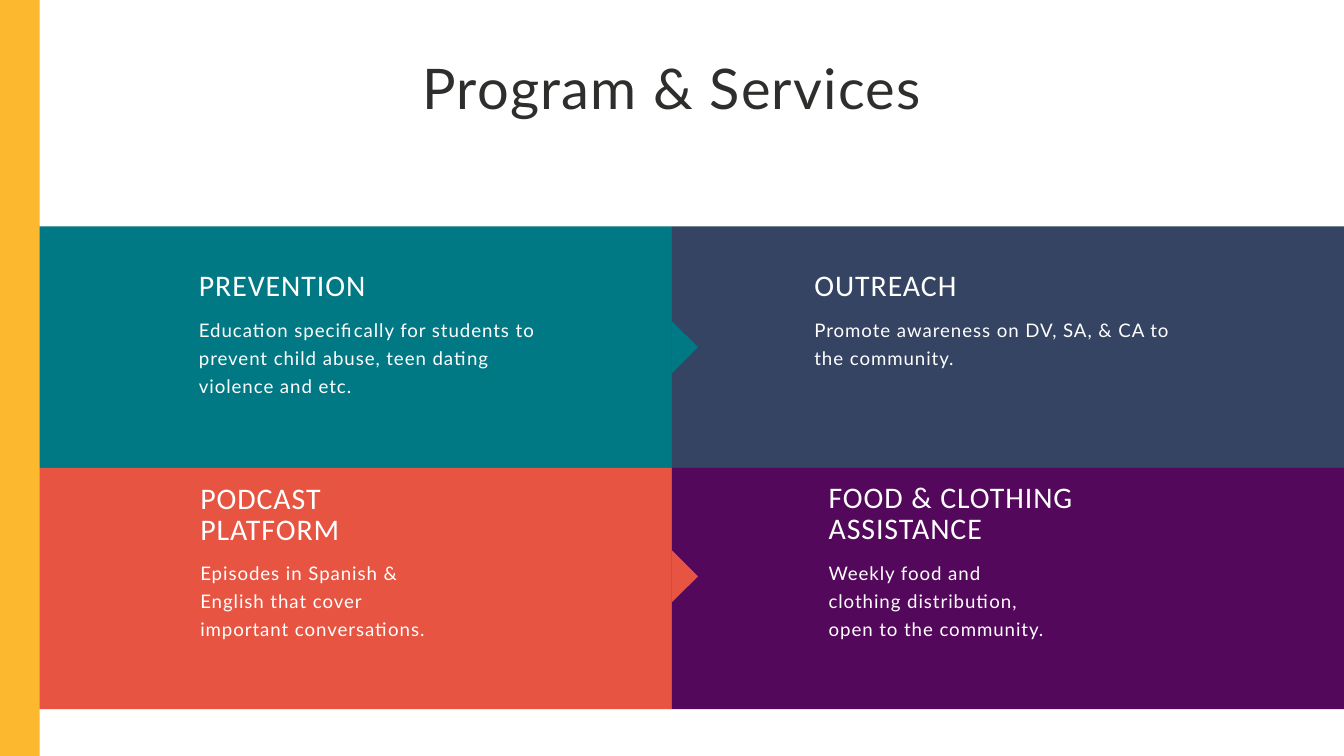
from pptx import Presentation
from pptx.dml.color import RGBColor
from pptx.enum.shapes import MSO_SHAPE
from pptx.enum.text import MSO_ANCHOR, MSO_AUTO_SIZE, PP_ALIGN
from pptx.util import Pt

RECTANGLE = MSO_SHAPE.RECTANGLE
TOP = MSO_ANCHOR.TOP
NO_AUTOFIT = MSO_AUTO_SIZE.NONE
LEFT, CENTER = PP_ALIGN.LEFT, PP_ALIGN.CENTER

WHITE = RGBColor(0xFF, 0xFF, 0xFF)
INK = RGBColor(0x2E, 0x2F, 0x2C)
NAVY = RGBColor(0x35, 0x44, 0x63)
PURPLE = RGBColor(0x54, 0x08, 0x5B)
TEAL = RGBColor(0x00, 0x79, 0x85)
CORAL = RGBColor(0xE8, 0x54, 0x42)
YELLOW = RGBColor(0xFC, 0xB8, 0x2F)

SLIDE_WIDTH, SLIDE_HEIGHT = 1440, 810
PANEL_WIDTH, PANEL_HEIGHT = SLIDE_WIDTH / 2, 258.6
PANELS_TOP = 242.6
ARROW_DEPTH = 27.8


def write_text(shape, text, *, size, line_spacing, font="Lato", color=WHITE,
               align=LEFT, tracking=1):
    frame = shape.text_frame
    frame.word_wrap = True
    frame.auto_size = NO_AUTOFIT
    frame.vertical_anchor = TOP
    frame.margin_left = frame.margin_right = 0
    frame.margin_top = frame.margin_bottom = 0
    paragraph = frame.paragraphs[0]
    paragraph.alignment = align
    paragraph.line_spacing = Pt(line_spacing)
    paragraph.space_before = Pt(0)
    run = paragraph.add_run()
    run.text = text
    run.font.name = font
    run.font.size = Pt(size)
    run.font.color.rgb = color
    run._r.get_or_add_rPr().set("spc", str(round(tracking * 100)))


def paint(shape, color):
    shape.shadow.inherit = False
    shape.fill.solid()
    shape.fill.fore_color.rgb = color
    shape.line.fill.background()


presentation = Presentation()
presentation.slide_width = Pt(SLIDE_WIDTH)
presentation.slide_height = Pt(SLIDE_HEIGHT)
slide = presentation.slides.add_slide(presentation.slide_layouts[5])
shapes = slide.shapes

title = shapes.title
title.left, title.top, title.width, title.height = Pt(388), Pt(71.3), Pt(664), Pt(58.3)
write_text(title, "Program & Services", size=60, line_spacing=57.6,
           color=INK, align=CENTER, tracking=1.3)

for column, colors in enumerate([(TEAL, CORAL), (NAVY, PURPLE)]):
    for row, color in enumerate(colors):
        panel = shapes.add_shape(
            RECTANGLE, Pt(column * PANEL_WIDTH), Pt(PANELS_TOP + row * PANEL_HEIGHT),
            Pt(PANEL_WIDTH), Pt(PANEL_HEIGHT))
        paint(panel, color)

for middle, color in [(372, TEAL), (617.5, CORAL)]:
    builder = shapes.build_freeform(Pt(PANEL_WIDTH), Pt(middle - ARROW_DEPTH))
    builder.add_line_segments([
        (Pt(PANEL_WIDTH + ARROW_DEPTH), Pt(middle)),
        (Pt(PANEL_WIDTH), Pt(middle + ARROW_DEPTH)),
    ], close=True)
    paint(builder.convert_to_shape(), color)

side_bar = shapes.add_shape(RECTANGLE, 0, 0, Pt(42.5), Pt(SLIDE_HEIGHT))
paint(side_bar, YELLOW)

programs = [
    ("PREVENTION", "Education specifically for students to prevent child abuse, "
     "teen dating violence and etc.", 213.1, 290.9, 34.6, 384.5, 384.5, 335.5, 115.2),
    ("OUTREACH", "Promote awareness on DV, SA, & CA to the community.",
     872.6, 290.9, 34.6, 384.5, 384.5, 335.5, 115.2),
    ("PODCAST PLATFORM", "Episodes in Spanish & English that cover important conversations.",
     214.6, 518.4, 68.4, 244, 244, 596.2, 121),
    ("FOOD & CLOTHING ASSISTANCE", "Weekly food and clothing distribution, open to the community.",
     887.8, 517.7, 68.4, 311.8, 244, 596.2, 90.7),
]
for (heading, body, left, heading_top, heading_height, heading_width,
     body_width, body_top, body_height) in programs:
    heading_box = shapes.add_textbox(
        Pt(left), Pt(heading_top), Pt(heading_width), Pt(heading_height))
    write_text(heading_box, heading, size=32, line_spacing=33.5, font="Calibri")
    body_box = shapes.add_textbox(Pt(left), Pt(body_top), Pt(body_width), Pt(body_height))
    write_text(body_box, body, size=20, line_spacing=30)

presentation.save("out.pptx")
